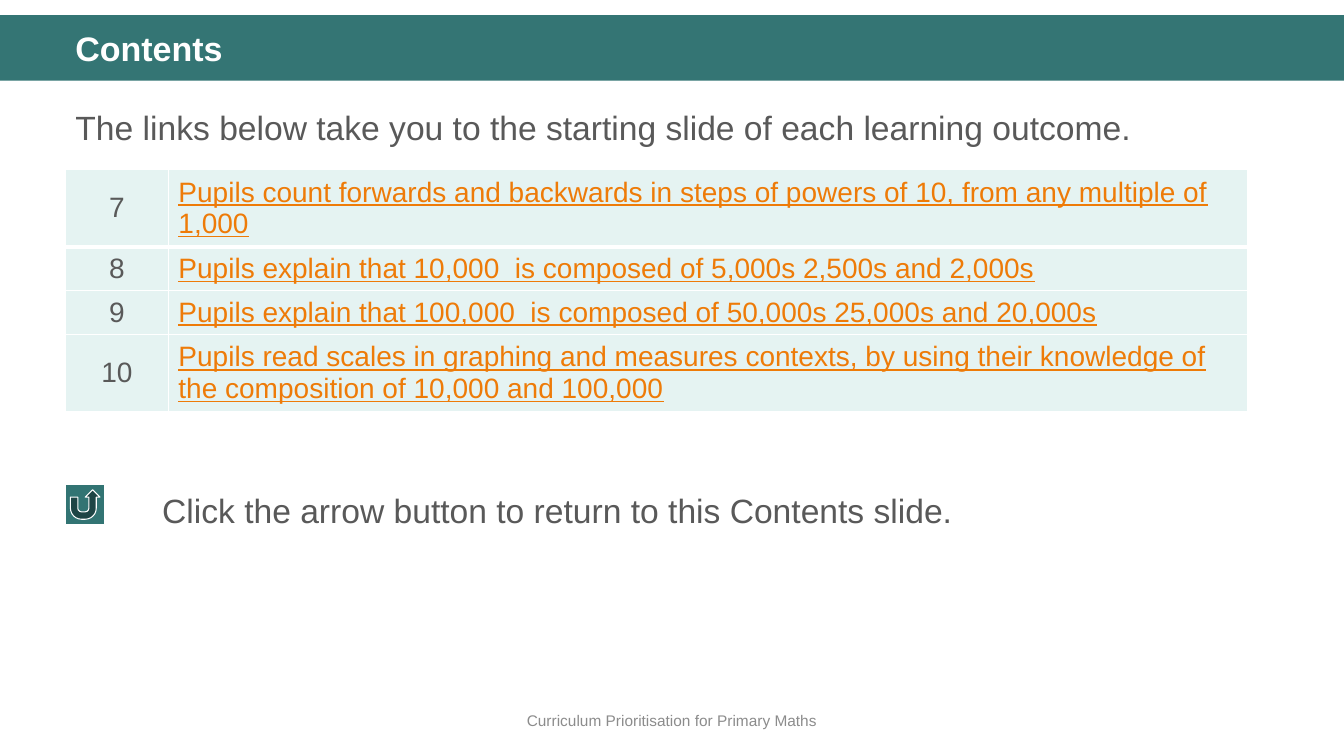
from lxml.etree import SubElement
from pptx import Presentation
from pptx.dml.color import RGBColor
from pptx.enum.shapes import MSO_SHAPE
from pptx.enum.text import MSO_ANCHOR, PP_ALIGN
from pptx.oxml.ns import qn
from pptx.util import Inches, Pt

theme = {
    "band": "347574", "button": "327473", "cell": "E5F3F2", "white": "FFFFFF",
    "title": {"size": Pt(24.3), "bold": True, "color": "FFFFFF"},
    "body": {"size": Pt(24), "color": "595959"},
    "number": {"size": Pt(20), "color": "595959"},
    "link": {"size": Pt(20), "color": "EE7B08", "underline": True},
    "footer": {"size": Pt(11), "color": "8C8C8C"},
}


def write(frame, text, style, **layout):
    frame.word_wrap = True
    line = frame.paragraphs[0]
    for name, value in layout.items():
        setattr(line, name, value)
    run = line.add_run()
    run.text = text
    run.font.name = "Arial"
    for name, value in theme[style].items():
        if name == "color":
            run.font.color.rgb = RGBColor.from_string(value)
        else:
            setattr(run.font, name, value)


def paint(item, color):
    item.fill.solid()
    item.fill.fore_color.rgb = RGBColor.from_string(color)


deck = Presentation()
deck.slide_width, deck.slide_height = Inches(13.33), Inches(7.5)
slide = deck.slides.add_slide(deck.slide_layouts[6])
shapes = slide.shapes

band = shapes.add_shape(MSO_SHAPE.RECTANGLE, 0, Inches(0.15), Inches(13.33), Inches(0.65))
band.shadow.inherit = False
paint(band, theme["band"])
band.line.fill.background()

labels = [
    ((0, 6.95, 13.33, 0.4), "Curriculum Prioritisation for Primary Maths", "footer",
     {"alignment": PP_ALIGN.CENTER}),
    ((0.65, 0.93, 12.18, 3.51),
     "The links below take you to the starting slide of each learning outcome.", "body",
     {"line_spacing": 1.2, "space_before": Pt(10)}),
    ((1.51, 4.81, 11.32, 0.5), "Click the arrow button to return to this Contents slide.",
     "body", {}),
    ((0.65, 0.27, 12.18, 0.47), "Contents", "title", {"line_spacing": 0.9}),
]
for place, text, style, layout in labels:
    frame = shapes.add_textbox(*map(Inches, place)).text_frame
    if style == "footer":
        frame.vertical_anchor = MSO_ANCHOR.MIDDLE
    write(frame, text, style, **layout)

goals = [
    ("7", "Pupils count forwards and backwards in steps of powers of 10, from any multiple of 1,000", 0.71),
    ("8", "Pupils explain that 10,000  is composed of 5,000s 2,500s and 2,000s", 0.41),
    ("9", "Pupils explain that 100,000  is composed of 50,000s 25,000s and 20,000s", 0.41),
    ("10", "Pupils read scales in graphing and measures contexts, by using their knowledge of "
     "the composition of 10,000 and 100,000", 0.71),
]
table = shapes.add_table(len(goals), 2, Inches(0.65), Inches(1.68), Inches(11.72), Inches(2.24)).table
for column, width in zip(table.columns, (1.02, 10.7)):
    column.width = Inches(width)

for row, (number, goal, height) in enumerate(goals):
    table.rows[row].height = Inches(height)
    edges = {"lnL": 1, "lnR": 1, "lnT": 3 if row == 1 else 1, "lnB": 3 if row == 0 else 1}
    cells = [(number, "number", PP_ALIGN.CENTER), (goal, "link", PP_ALIGN.LEFT)]
    for col, (text, style, align) in enumerate(cells):
        cell = table.cell(row, col)
        cell.vertical_anchor = MSO_ANCHOR.MIDDLE
        write(cell.text_frame, text, style, alignment=align)
        props = cell._tc.get_or_add_tcPr()
        for edge, width in edges.items():
            border = SubElement(props, qn("a:" + edge), w=str(Pt(width)))
            solid = SubElement(border, qn("a:solidFill"))
            SubElement(solid, qn("a:srgbClr"), val=theme["white"])
        paint(cell, theme["cell"])

button = shapes.add_shape(MSO_SHAPE.ACTION_BUTTON_RETURN, Inches(0.65), Inches(4.81),
                          Inches(0.39), Inches(0.39))
button.shadow.inherit = False
paint(button, theme["button"])
button.line.color.rgb = RGBColor.from_string(theme["white"])
button.line.width = Pt(0.75)

deck.save("out.pptx")
